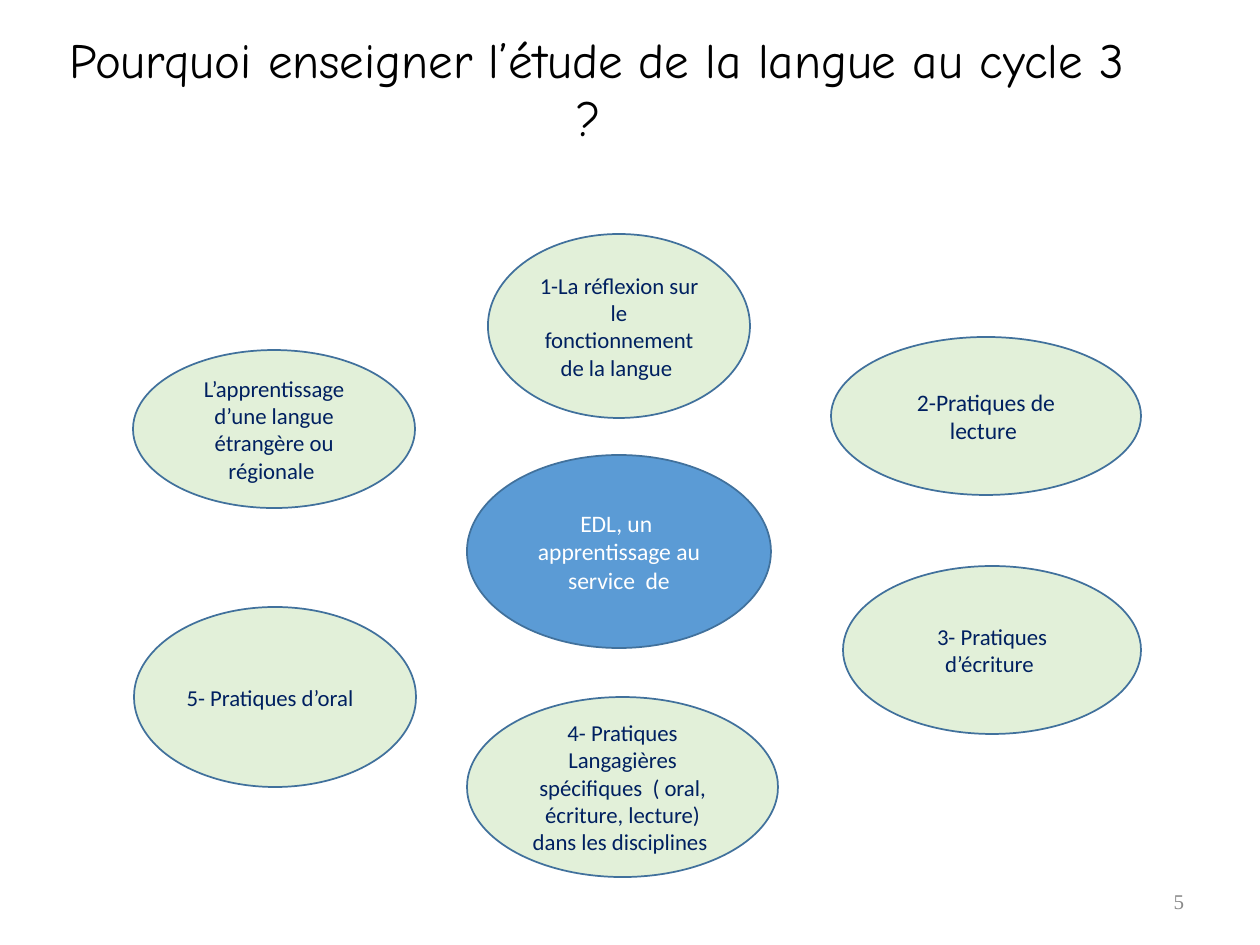
from dataclasses import dataclass

from pptx import Presentation
from pptx.dml.color import RGBColor
from pptx.enum import shapes, text
from pptx.util import Emu, Pt

SCALE = 914400 / 126
BLACK = RGBColor(0x00, 0x00, 0x00)
WHITE = RGBColor(0xFF, 0xFF, 0xFF)
NAVY = RGBColor(0x00, 0x20, 0x60)
GRAY = RGBColor(0x89, 0x89, 0x89)
BLUE = RGBColor(0x5B, 0x9B, 0xD5)
GREEN = RGBColor(0xE2, 0xF0, 0xD9)
EDGE = RGBColor(0x41, 0x71, 0x9C)


@dataclass
class Box:
    left: int
    top: int
    width: int
    height: int


@dataclass
class Label:
    words: str
    size: float
    color: RGBColor = NAVY
    font: str = "Calibri"
    align: text.PP_ALIGN = text.PP_ALIGN.CENTER


@dataclass
class Bubble:
    box: Box
    label: Label
    fill: RGBColor = GREEN


BUBBLES = [
    Bubble(Box(467, 455, 304, 193),
           Label("EDL, un  apprentissage au service  de", 13.5, WHITE), BLUE),
    Bubble(Box(843, 566, 298, 168), Label("3- Pratiques d’écriture ", 13)),
    Bubble(Box(831, 337, 310, 158), Label("2-Pratiques de lecture ", 13.5)),
    Bubble(Box(134, 607, 282, 180), Label("5- Pratiques d’oral  ", 13)),
    Bubble(Box(467, 697, 311, 180),
           Label("4- Pratiques Langagières spécifiques  ( oral, écriture, "
                 "lecture) dans les disciplines ", 13)),
    Bubble(Box(133, 350, 282, 158),
           Label("L’apprentissage d’une langue étrangère ou régionale ", 13)),
    Bubble(Box(488, 234, 262, 184),
           Label("1-La réflexion sur le fonctionnement de la langue ", 13)),
]


def px(count: int) -> Emu:
    return Emu(round(count * SCALE))


def place(box: Box) -> tuple[Emu, ...]:
    return tuple(map(px, (box.left, box.top, box.width, box.height)))


def write(shape, label: Label, side: int, edge: int) -> None:
    """Fill the shape's frame, with side and edge as its insets."""
    frame = shape.text_frame
    frame.word_wrap = True
    frame.vertical_anchor = text.MSO_ANCHOR.MIDDLE
    frame.margin_left = frame.margin_right = px(side)
    frame.margin_top = frame.margin_bottom = px(edge)
    para = frame.paragraphs[0]
    para.text = label.words
    para.alignment = label.align
    para.font.name = label.font
    para.font.size = Pt(label.size)
    para.font.color.rgb = label.color


def add_text(slide, box: Box, label: Label) -> None:
    write(slide.shapes.add_textbox(*place(box)), label, 13, 6)


def add_bubble(slide, bubble: Bubble) -> None:
    oval = slide.shapes.add_shape(shapes.MSO_SHAPE.OVAL, *place(bubble.box))
    oval.shadow.inherit = False
    oval.fill.solid()
    oval.fill.fore_color.rgb = bubble.fill
    oval.line.color.rgb = EDGE
    oval.line.width = Pt(1)
    write(oval, bubble.label, 9, 5)


def main() -> None:
    deck = Presentation()
    deck.slide_width, deck.slide_height = px(1260), px(945)
    slide = deck.slides.add_slide(deck.slide_layouts[6])
    add_text(slide, Box(54, 20, 1086, 136),
             Label("Pourquoi enseigner l’étude de la langue au cycle 3 ? ",
                   28, BLACK, "Comic Neue"))
    for bubble in BUBBLES:
        add_bubble(slide, bubble)
    add_text(slide, Box(903, 876, 294, 50),
             Label("5", 12, GRAY, "Times New Roman", text.PP_ALIGN.RIGHT))
    deck.save("out.pptx")


if __name__ == "__main__":
    main()
